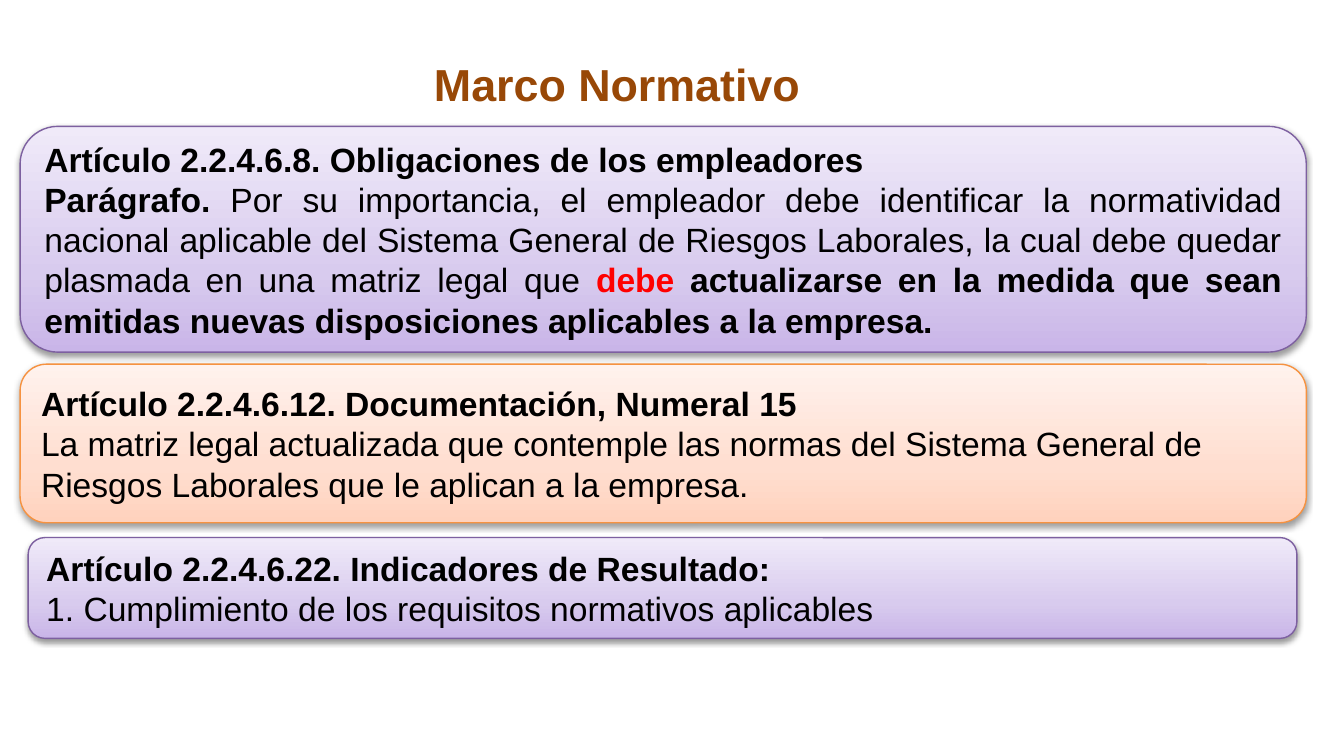
from dataclasses import dataclass

from lxml.etree import SubElement
from pptx import Presentation
from pptx.dml.color import RGBColor
from pptx.enum.shapes import MSO_SHAPE
from pptx.enum.text import MSO_ANCHOR, MSO_AUTO_SIZE, PP_ALIGN
from pptx.oxml.ns import qn
from pptx.util import Inches, Pt


@dataclass(frozen=True)
class Palette:
    line: str
    stops: tuple[tuple[int, str], ...]


@dataclass(frozen=True)
class Theme:
    font: str = "Arial"
    title_size: int = 24
    body_size: int = 18
    title: str = "984807"
    text: str = "000000"
    alert: str = "FF0000"
    shadow: str = "000000"
    purple: Palette = Palette("7D60A0", ((0, "C9B5E8"), (35, "D8CBEE"), (100, "F0EAF9")))
    orange: Palette = Palette("F69240", ((0, "FFD2BD"), (35, "FFDED0"), (100, "FFF2ED")))


THEME = Theme()


@dataclass(frozen=True)
class Span:
    text: str
    bold: bool = False
    color: str = THEME.text


@dataclass(frozen=True)
class Article:
    left: float
    top: float
    width: float
    height: float
    palette: Palette
    heading: str
    body: tuple[Span, ...]
    align: PP_ALIGN = PP_ALIGN.LEFT


ARTICLES = (
    Article(0.15, 0.94, 9.57, 1.68, THEME.purple,
            "Artículo 2.2.4.6.8. Obligaciones de los empleadores",
            (Span("Parágrafo. ", bold=True),
             Span("Por su importancia, el empleador debe identificar la normatividad "
                  "nacional aplicable del Sistema General de Riesgos Laborales, la cual "
                  "debe quedar plasmada en una matriz legal que "),
             Span("debe", bold=True, color=THEME.alert),
             Span(" actualizarse en la medida que sean emitidas nuevas disposiciones "
                  "aplicables a la empresa.", bold=True)),
            PP_ALIGN.JUSTIFY),
    Article(0.15, 2.71, 9.57, 1.18, THEME.orange,
            "Artículo 2.2.4.6.12. Documentación, Numeral 15",
            (Span("La matriz legal actualizada que contemple las normas del Sistema "
                  "General de Riesgos Laborales que le aplican a la empresa."),)),
    Article(0.21, 4, 9.44, 0.75, THEME.purple,
            "Artículo 2.2.4.6.22. Indicadores de Resultado:",
            (Span("1. Cumplimiento de los requisitos normativos aplicables"),)),
)


def style_font(font, size: int, color: str, bold: bool) -> None:
    font.name = THEME.font
    font.size = Pt(size)
    font.bold = bold
    font.color.rgb = RGBColor.from_string(color)


def add_spans(paragraph, spans: tuple[Span, ...], align: PP_ALIGN) -> None:
    paragraph.alignment = align
    for span in spans:
        run = paragraph.add_run()
        run.text = span.text
        style_font(run.font, THEME.body_size, span.color, span.bold)


def apply_gradient(shape, palette: Palette) -> None:
    """Fill from the bottom edge up with the three stops of the palette."""
    shape.fill.gradient()
    shape.fill.gradient_angle = 90
    stops = shape._element.spPr.find(qn("a:gradFill")).find(qn("a:gsLst"))
    for stop in list(stops):
        stops.remove(stop)
    for percent, color in palette.stops:
        stop = SubElement(stops, qn("a:gs"), pos=str(percent * 1000))
        SubElement(stop, qn("a:srgbClr"), val=color)


def apply_shadow(shape) -> None:
    shape.shadow.inherit = False
    effects = shape._element.spPr.find(qn("a:effectLst"))
    shadow = SubElement(effects, qn("a:outerShdw"), blurRad=str(Pt(3.1)),
                        dist=str(Pt(1.6)), dir="5400000", rotWithShape="0")
    color = SubElement(shadow, qn("a:srgbClr"), val=THEME.shadow)
    SubElement(color, qn("a:alpha"), val="38000")


def add_article(slide, article: Article) -> None:
    panel = slide.shapes.add_shape(
        MSO_SHAPE.ROUNDED_RECTANGLE, Inches(article.left), Inches(article.top),
        Inches(article.width), Inches(article.height))
    apply_gradient(panel, article.palette)
    panel.line.color.rgb = RGBColor.from_string(article.palette.line)
    panel.line.width = Pt(0.75)
    apply_shadow(panel)
    frame = panel.text_frame
    frame.word_wrap = True
    frame.vertical_anchor = MSO_ANCHOR.MIDDLE
    add_spans(frame.paragraphs[0], (Span(article.heading, bold=True),), PP_ALIGN.LEFT)
    add_spans(frame.add_paragraph(), article.body, article.align)


def set_title(slide, text: str) -> None:
    title = slide.shapes.title
    title.left, title.top = Inches(-0.41), Inches(0.26)
    title.width, title.height = Inches(10), Inches(0.72)
    frame = title.text_frame
    frame.text = text
    frame.auto_size = MSO_AUTO_SIZE.NONE
    frame.vertical_anchor = MSO_ANCHOR.MIDDLE
    heading = frame.paragraphs[0]
    heading.alignment = PP_ALIGN.CENTER
    style_font(heading.runs[0].font, THEME.title_size, THEME.title, True)


def main() -> None:
    presentation = Presentation()
    presentation.slide_width = Inches(10)
    presentation.slide_height = Inches(10 * 9 / 16)
    slide = presentation.slides.add_slide(presentation.slide_layouts.get_by_name("Title Only"))
    set_title(slide, "Marco Normativo")
    for article in ARTICLES:
        add_article(slide, article)
    presentation.save("out.pptx")


if __name__ == "__main__":
    main()
